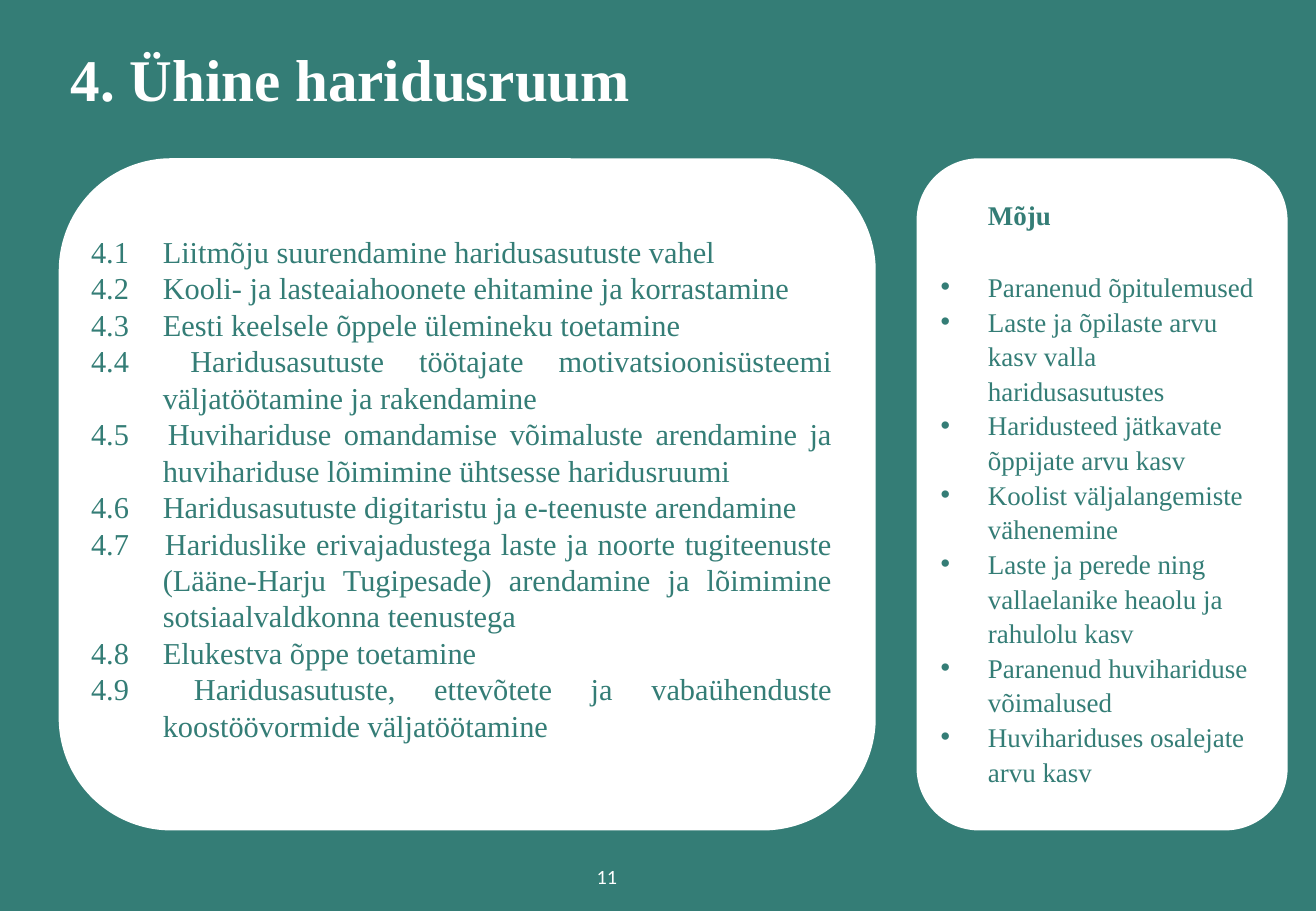
from dataclasses import dataclass

from lxml.etree import SubElement
from pptx import Presentation
from pptx.dml.color import RGBColor
from pptx.enum.shapes import MSO_SHAPE
from pptx.enum.text import MSO_ANCHOR, MSO_AUTO_SIZE, PP_ALIGN
from pptx.oxml.ns import qn
from pptx.util import Inches, Pt

HEADING = "4. Ühine haridusruum"
GOAL_GROUP = 4
GOALS = [
    "Liitmõju suurendamine haridusasutuste vahel",
    "Kooli- ja lasteaiahoonete ehitamine ja korrastamine",
    "Eesti keelsele õppele ülemineku toetamine",
    "Haridusasutuste töötajate motivatsioonisüsteemi väljatöötamine ja rakendamine",
    "Huvihariduse omandamise võimaluste arendamine ja huvihariduse lõimimine ühtsesse haridusruumi",
    "Haridusasutuste digitaristu ja e-teenuste arendamine",
    "Hariduslike erivajadustega laste ja noorte tugiteenuste (Lääne-Harju Tugipesade) "
    "arendamine ja lõimimine sotsiaalvaldkonna teenustega",
    "Elukestva õppe toetamine",
    "Haridusasutuste, ettevõtete ja vabaühenduste koostöövormide väljatöötamine",
]
IMPACT_HEADING = "Mõju"
IMPACTS = [
    "Paranenud õpitulemused",
    "Laste ja õpilaste arvu kasv valla haridusasutustes",
    "Haridusteed jätkavate õppijate arvu kasv",
    "Koolist väljalangemiste vähenemine",
    "Laste ja perede ning vallaelanike heaolu ja rahulolu kasv",
    "Paranenud huvihariduse võimalused",
    "Huvihariduses osalejate arvu kasv",
]
PAGE_NUMBER = "11"

SLIDE_SIZE = (10.83, 7.5)
PANEL_TOP, PANEL_HEIGHT = 1.31, 5.52
GOALS_PANEL = (0.49, PANEL_TOP, 6.71, PANEL_HEIGHT)
GOALS_TEXT = (0.7, 1.85, 6.2, 4.34)
IMPACT_PANEL = (7.55, PANEL_TOP, 3.04, PANEL_HEIGHT)
IMPACT_TEXT = (7.69, 1.56, 2.75, 5)
HEADING_PLACE = (0.53, 0.38, 9.78, 0.6)
PAGE_PLACE = (4.85, 7.07, 0.29, 0.29)
GOAL_INDENT, IMPACT_INDENT = 0.59, 0.39


@dataclass(frozen=True)
class Theme:
    teal: RGBColor = RGBColor(0x34, 0x7D, 0x76)
    white: RGBColor = RGBColor(0xFF, 0xFF, 0xFF)
    serif: str = "Times New Roman"
    sans: str = "Calibri"
    heading: int = 35
    goal: int = 18
    impact: int = 16
    page: int = 12


THEME = Theme()


def add_panel(slide, place):
    panel = slide.shapes.add_shape(MSO_SHAPE.ROUNDED_RECTANGLE, *map(Inches, place))
    panel.shadow.inherit = False
    panel.fill.solid()
    panel.fill.fore_color.rgb = THEME.white
    panel.line.color.rgb = THEME.white
    panel.line.width = Pt(1)


def set_frame(frame, wrap=True):
    frame.word_wrap = wrap
    frame.auto_size = MSO_AUTO_SIZE.NONE
    frame.vertical_anchor = MSO_ANCHOR.MIDDLE
    frame.margin_left = frame.margin_right = Inches(0.05)
    frame.margin_top = frame.margin_bottom = Inches(0.05)
    return frame


def add_text(slide, place, wrap=True):
    return set_frame(slide.shapes.add_textbox(*map(Inches, place)).text_frame, wrap)


def write(paragraph, text, size, color, font=THEME.serif, bold=False, align=PP_ALIGN.LEFT):
    paragraph.alignment = align
    run = paragraph.add_run()
    run.text = text
    run.font.name = font
    run.font.size = Pt(size)
    run.font.bold = bold
    run.font.color.rgb = color


def indent(paragraph, left, first=0, bullet=None):
    properties = paragraph._p.get_or_add_pPr()
    properties.set("marL", str(Inches(left)))
    properties.set("indent", str(Inches(first)))
    if bullet:
        SubElement(properties, qn("a:buFont")).set("typeface", "Arial")
        SubElement(properties, qn("a:buChar")).set("char", bullet)


def add_goals(slide):
    add_panel(slide, GOALS_PANEL)
    frame = add_text(slide, GOALS_TEXT)
    for number, goal in enumerate(GOALS, 1):
        paragraph = frame.paragraphs[0] if number == 1 else frame.add_paragraph()
        indent(paragraph, GOAL_INDENT, -GOAL_INDENT)
        write(paragraph, f"{GOAL_GROUP}.{number} \t{goal}", THEME.goal, THEME.teal,
              align=PP_ALIGN.JUSTIFY)


def add_impacts(slide):
    add_panel(slide, IMPACT_PANEL)
    frame = add_text(slide, IMPACT_TEXT)
    impact_heading = frame.paragraphs[0]
    indent(impact_heading, IMPACT_INDENT)
    impact_heading.space_after = Pt(22)
    write(impact_heading, IMPACT_HEADING, THEME.impact, THEME.teal, bold=True)
    for impact in IMPACTS:
        paragraph = frame.add_paragraph()
        paragraph.line_spacing = 1.07
        indent(paragraph, IMPACT_INDENT, -IMPACT_INDENT, "•")
        write(paragraph, impact, THEME.impact, THEME.teal)
    paragraph.space_after = Pt(8)


def add_heading(slide):
    heading = slide.shapes.title
    heading.left, heading.top, heading.width, heading.height = map(Inches, HEADING_PLACE)
    paragraph = set_frame(heading.text_frame).paragraphs[0]
    paragraph.line_spacing = 0.9
    write(paragraph, HEADING, THEME.heading, THEME.white, bold=True)


def main():
    deck = Presentation()
    deck.slide_width, deck.slide_height = map(Inches, SLIDE_SIZE)
    slide = deck.slides.add_slide(deck.slide_layouts.get_by_name("Title Only"))
    slide.background.fill.solid()
    slide.background.fill.fore_color.rgb = THEME.teal
    add_heading(slide)
    add_goals(slide)
    add_impacts(slide)
    page = add_text(slide, PAGE_PLACE, wrap=False)
    write(page.paragraphs[0], PAGE_NUMBER, THEME.page, THEME.white, THEME.sans,
          align=PP_ALIGN.CENTER)
    deck.save("out.pptx")


if __name__ == "__main__":
    main()
